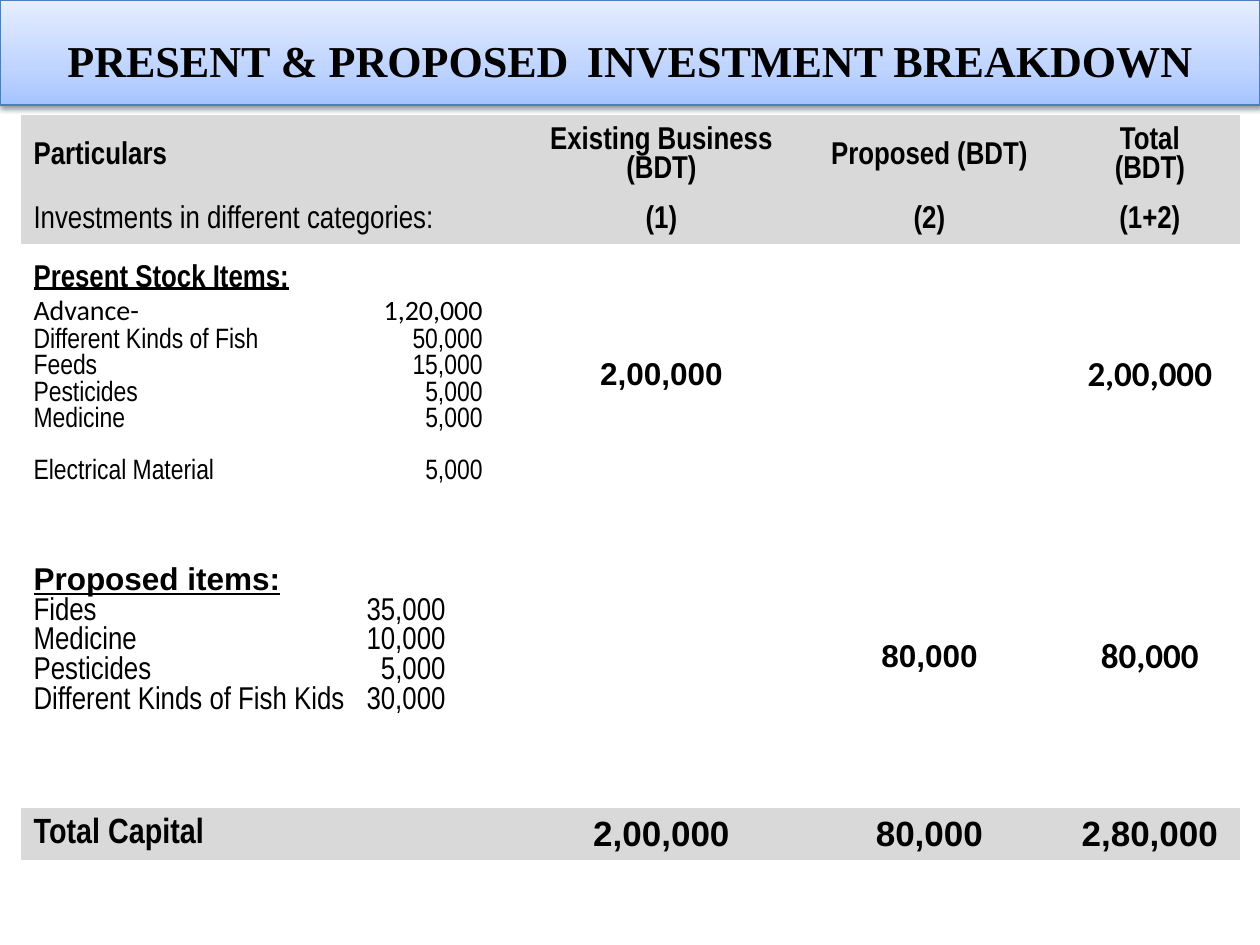
from lxml import etree
from pptx import Presentation
from pptx.dml.color import RGBColor
from pptx.enum.text import MSO_ANCHOR, MSO_AUTO_SIZE, PP_ALIGN
from pptx.oxml import parse_xml
from pptx.oxml.ns import nsdecls, qn
from pptx.util import Emu, Pt

CENTER, LEFT = PP_ALIGN.CENTER, PP_ALIGN.LEFT
MIDDLE = MSO_ANCHOR.MIDDLE
NO_AUTOFIT = MSO_AUTO_SIZE.NONE
EMU_PER_PX = 914400 / 126
NO_GRID_STYLE = "{2D5ABB26-0587-4C30-8999-92F81FD0307C}"
BLACK, GREY = "000000", "D9D9D9"
NARROW, ARIAL, CALIBRI = "Arial Narrow", "Arial", "Calibri"

COLUMN_WIDTHS = [503, 275, 261, 180]
ROW_HEIGHTS = [82, 47, 262, 302, 52]
SHADED_ROWS = (0, 1, 4)

HEADINGS = [
    ["Particulars", "Existing Business (BDT)", "Proposed (BDT)", "Total\n(BDT)"],
    ["Investments in different categories:", "(1)", "(2)", "(1+2)"],
]
STOCK_ITEMS = [
    ("Advance-", "1,20,000"),
    ("Different Kinds of Fish", "50,000"),
    ("Feeds", "15,000"),
    ("Pesticides", "5,000"),
    ("Medicine", "5,000"),
    ("Electrical Material", "5,000"),
]
PROPOSED_ITEMS = [
    ("Fides", "35,000"),
    ("Medicine", "10,000"),
    ("Pesticides", "5,000"),
    ("Different Kinds of Fish Kids", "30,000"),
]
TOTALS = ["2,00,000", "80,000", "2,80,000"]


def px(length):
    return Emu(round(length * EMU_PER_PX))


def colour(hex_string):
    return RGBColor.from_string(hex_string)


def style(font, size, name, bold=True, underline=False):
    font.size, font.name = Pt(size), name
    font.bold, font.underline = bold, underline
    font.color.rgb = colour(BLACK)


def add_title(page):
    title = page.shapes.title
    title.left, title.top, title.width, title.height = px(0), px(0), px(1260), px(105)
    title.line.color.rgb = colour("4B7EBC")
    title.line.width = Pt(0.75)
    add_title_effects(title)
    frame = title.text_frame
    frame.auto_size = NO_AUTOFIT
    frame.vertical_anchor = MIDDLE
    para = frame.paragraphs[0]
    para.alignment = CENTER
    for text, size, name in [
        ("PRESENT & PROPOSED", 25.2, "Times New Roman"),
        (" ", 36, "TeX Gyre Schola"),
        ("INVESTMENT BREAKDOWN", 25.2, "Times New Roman"),
    ]:
        span = para.add_run()
        span.text = text
        style(span.font, size, name)


def add_title_effects(title):
    """Give the title bar its three-stop gradient and soft lower shadow."""
    stops = "".join(
        f'<a:gs pos="{percent * 1000}"><a:srgbClr val="{value}"/></a:gs>'
        for percent, value in [(0, "A4C4FF"), (35, "BFD4FF"), (100, "E6EEFF")]
    )
    gradient = parse_xml(
        f'<a:gradFill {nsdecls("a")} rotWithShape="1"><a:gsLst>{stops}</a:gsLst>'
        '<a:lin ang="16200000" scaled="0"/></a:gradFill>'
    )
    shadow = parse_xml(
        f'<a:effectLst {nsdecls("a")}><a:outerShdw blurRad="{Pt(3.1)}" '
        f'dist="{Pt(1.6)}" dir="5400000" rotWithShape="0"><a:srgbClr val="{BLACK}">'
        '<a:alpha val="38000"/></a:srgbClr></a:outerShdw></a:effectLst>'
    )
    properties = title._element.spPr
    outline = properties.find(qn("a:ln"))
    outline.addprevious(gradient)
    outline.addnext(shadow)


def add_breakdown_table(page):
    frame = page.shapes.add_table(
        len(ROW_HEIGHTS), len(COLUMN_WIDTHS), px(21), px(115),
        px(sum(COLUMN_WIDTHS)), px(sum(ROW_HEIGHTS)),
    )
    table = frame.table
    table.first_row = table.horz_banding = False
    table._tbl.tblPr.find(qn("a:tableStyleId")).text = NO_GRID_STYLE
    for column, width in zip(table.columns, COLUMN_WIDTHS):
        column.width = px(width)
    for index, (row, height) in enumerate(zip(table.rows, ROW_HEIGHTS)):
        row.height = px(height)
        for cell in row.cells:
            cell.vertical_anchor = MIDDLE
            if index in SHADED_ROWS:
                cell.fill.solid()
                cell.fill.fore_color.rgb = colour(GREY)
            else:
                cell.fill.background()
    return table


def fill_cell(cell, text, size, name, bold=True, align=CENTER):
    cell.text_frame.text = text
    for para in cell.text_frame.paragraphs:
        para.alignment = align
        style(para.runs[0].font, size, name, bold)


def fill_items(cell, heading, heading_font, items, size, tab):
    """Write an underlined heading, then items with amounts right-aligned at tab."""
    frame = cell.text_frame
    frame.text = heading
    style(frame.paragraphs[0].runs[0].font, 18, heading_font, underline=True)
    for item in items:
        para = frame.add_paragraph()
        para.text = "\t".join(item)
        tabs = etree.SubElement(para._p.get_or_add_pPr(), qn("a:tabLst"))
        etree.SubElement(tabs, qn("a:tab"), pos=str(px(tab)), algn="r")
        for span in para.runs:
            style(span.font, size, NARROW, bold=False)
    return frame.paragraphs[1:]


def main():
    deck = Presentation()
    deck.slide_width, deck.slide_height = px(1260), px(945)
    page = deck.slides.add_slide(deck.slide_layouts[5])
    add_title(page)
    table = add_breakdown_table(page)

    for row, texts in enumerate(HEADINGS):
        for column, text in enumerate(texts):
            fill_cell(table.cell(row, column), text, 18, NARROW,
                      bold=row == 0 or column > 0, align=CENTER if column else LEFT)

    stock = fill_items(table.cell(2, 0), "Present Stock Items:", NARROW,
                       STOCK_ITEMS, 16, tab=449)
    stock[0].runs[0].font.name = CALIBRI
    stock[-1].space_before = Pt(15)
    fill_items(table.cell(3, 0), "Proposed items:", ARIAL,
               PROPOSED_ITEMS, 18, tab=412)
    table.cell(3, 0).margin_bottom = px(42)

    for row, column, amount in [(2, 1, "2,00,000"), (3, 2, "80,000")]:
        fill_cell(table.cell(row, column), amount, 18, ARIAL)
        fill_cell(table.cell(row, 3), amount, 20, CALIBRI)

    fill_cell(table.cell(4, 0), "Total Capital", 20, NARROW, align=LEFT)
    for column, amount in enumerate(TOTALS, start=1):
        fill_cell(table.cell(4, column), amount, 20, ARIAL)

    deck.save("out.pptx")


if __name__ == "__main__":
    main()
